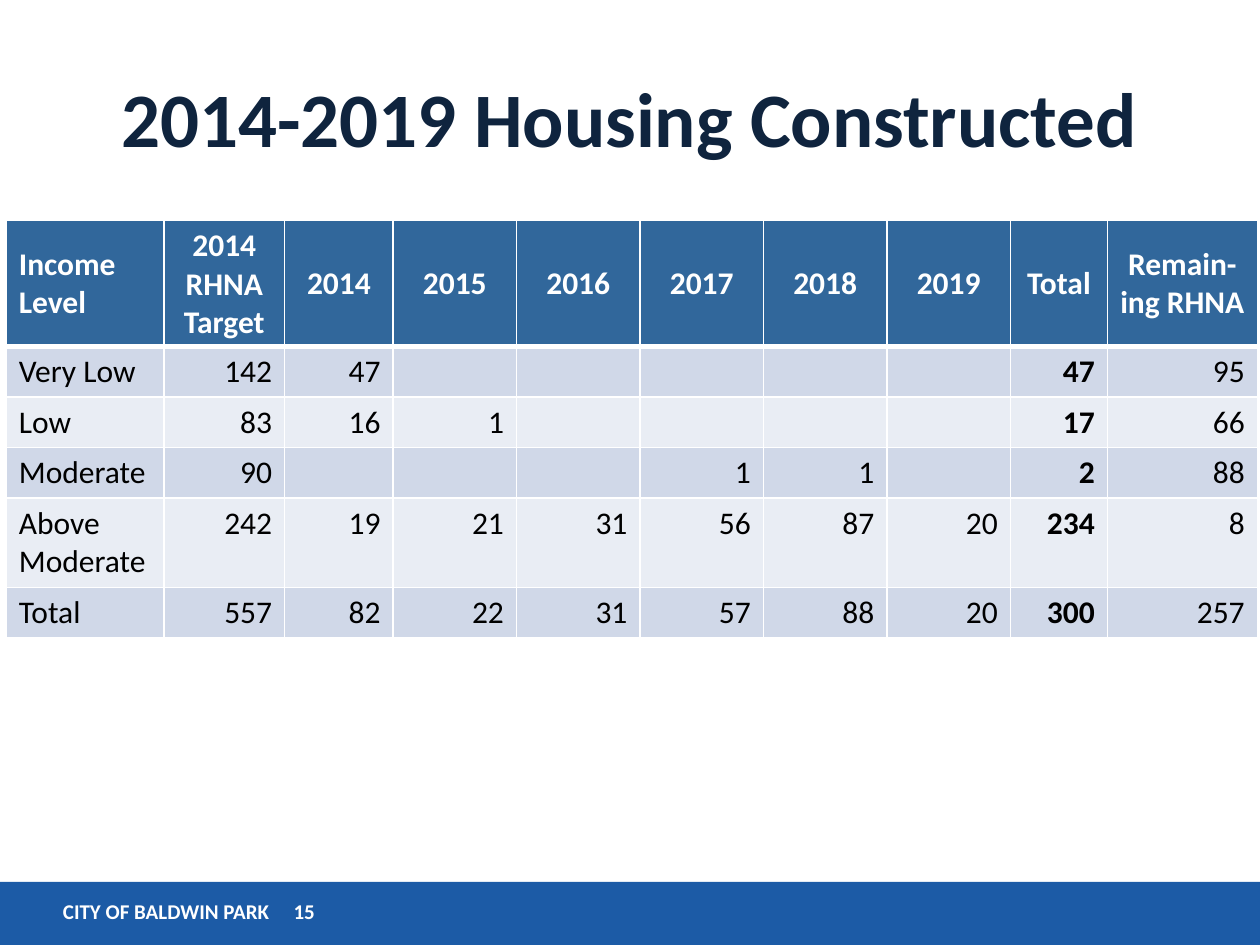
import pptx
import pptx.util
import pptx.dml.color
import pptx.enum.shapes
import pptx.enum.text
import pptx.oxml
import pptx.oxml.ns
from dataclasses import dataclass

Inches = pptx.util.Inches
Align = pptx.enum.text.PP_ALIGN
Anchor = pptx.enum.text.MSO_ANCHOR


@dataclass(frozen=True)
class Theme:
    font: str = "Calibri"
    white: str = "FFFFFF"
    ink: str = "000000"
    navy: str = "0F243E"
    bar: str = "1C5BA6"
    head: str = "31679B"
    bands: tuple = ("D0D8E8", "E9EDF4")
    title: int = 44
    body: int = 18
    foot: int = 12


THEME = Theme()
TITLE = "2014-2019 Housing Constructed"
FOOTER = "CITY OF BALDWIN PARK\t15"
HEAD = ["Income Level", "2014 RHNA\nTarget", 2014, 2015, 2016, 2017, 2018, 2019,
        "Total", "Remain-ing RHNA"]
ROWS = [
    ["Very Low", 142, 47, "", "", "", "", "", 47, 95],
    ["Low", 83, 16, 1, "", "", "", "", 17, 66],
    ["Moderate", 90, "", "", "", 1, 1, "", 2, 88],
    ["Above Moderate", 242, 19, 21, 31, 56, 87, 20, 234, 8],
    ["Total", 557, 82, 22, 31, 57, 88, 20, 300, 257],
]
WIDTHS = [1.25, 0.96, 0.86] + [0.98] * 5 + [0.77, 1.19]
HEIGHTS = [1, 0.4, 0.4, 0.4, 0.71, 0.4]
SUM = HEAD.index("Total")


def color(code):
    return pptx.dml.color.RGBColor.from_string(code)


def paint(item, code):
    item.fill.solid()
    item.fill.fore_color.rgb = color(code)


def write(frame, text, size, code, bold, align):
    frame.text = str(text)
    frame.word_wrap = True
    for para in frame.paragraphs:
        para.alignment = align
        for run in para.runs:
            run.font.name = THEME.font
            run.font.size = pptx.util.Pt(size)
            run.font.bold = bold
            run.font.color.rgb = color(code)


def edge(cell, top, base):
    props = cell._tc.get_or_add_tcPr()
    sides = [("L", 1), ("R", 1), ("T", top), ("B", base)]
    for spot, (side, width) in enumerate(sides):
        line = pptx.oxml.parse_xml(
            f'<a:ln{side} {pptx.oxml.ns.nsdecls("a")} w="{pptx.util.Pt(width)}">'
            f'<a:solidFill><a:srgbClr val="{THEME.white}"/></a:solidFill></a:ln{side}>')
        props.insert(spot, line)


def add_bar(slide):
    bar = slide.shapes.add_shape(pptx.enum.shapes.MSO_SHAPE.RECTANGLE,
                                 0, Inches(7), Inches(10), Inches(0.5))
    bar.shadow.inherit = False
    paint(bar, THEME.bar)
    bar.line.fill.background()
    box = slide.shapes.add_textbox(0, Inches(7.08), Inches(3.33), Inches(0.3))
    frame = box.text_frame
    frame.margin_left = frame.margin_right = Inches(0.5)
    write(frame, FOOTER, THEME.foot, THEME.white, True, Align.LEFT)
    tabs = pptx.oxml.parse_xml(
        f'<a:tabLst {pptx.oxml.ns.nsdecls("a")}>'
        f'<a:tab pos="{Inches(1.83)}" algn="l"/></a:tabLst>')
    frame.paragraphs[0]._p.get_or_add_pPr().append(tabs)


def add_title(slide):
    box = slide.shapes.add_textbox(Inches(0.5), Inches(0.3), Inches(9), Inches(1.25))
    box.text_frame.vertical_anchor = Anchor.MIDDLE
    write(box.text_frame, TITLE, THEME.title, THEME.navy, True, Align.CENTER)


def add_grid(slide):
    data = [HEAD] + ROWS
    grid = slide.shapes.add_table(
        len(data), len(HEAD), Inches(0.05), Inches(1.75),
        Inches(sum(WIDTHS)), Inches(sum(HEIGHTS))).table
    for col, width in zip(grid.columns, WIDTHS):
        col.width = Inches(width)
    for row, high in zip(grid.rows, HEIGHTS):
        row.height = Inches(high)
    for r, row in enumerate(data):
        top = r == 0
        for c, value in enumerate(row):
            cell = grid.cell(r, c)
            paint(cell, THEME.head if top else THEME.bands[(r - 1) % 2])
            edge(cell, 3 if r == 1 else 1, 3 if top else 1)
            cell.vertical_anchor = Anchor.MIDDLE if top else Anchor.TOP
            side = Align.LEFT if c == 0 else Align.CENTER if top else Align.RIGHT
            write(cell.text_frame, value, THEME.body,
                  THEME.white if top else THEME.ink, top or c == SUM, side)


def main():
    deck = pptx.Presentation()
    deck.slide_width, deck.slide_height = Inches(10), Inches(7.5)
    slide = deck.slides.add_slide(deck.slide_layouts[6])
    add_bar(slide)
    add_title(slide)
    add_grid(slide)
    deck.save("out.pptx")


if __name__ == "__main__":
    main()
